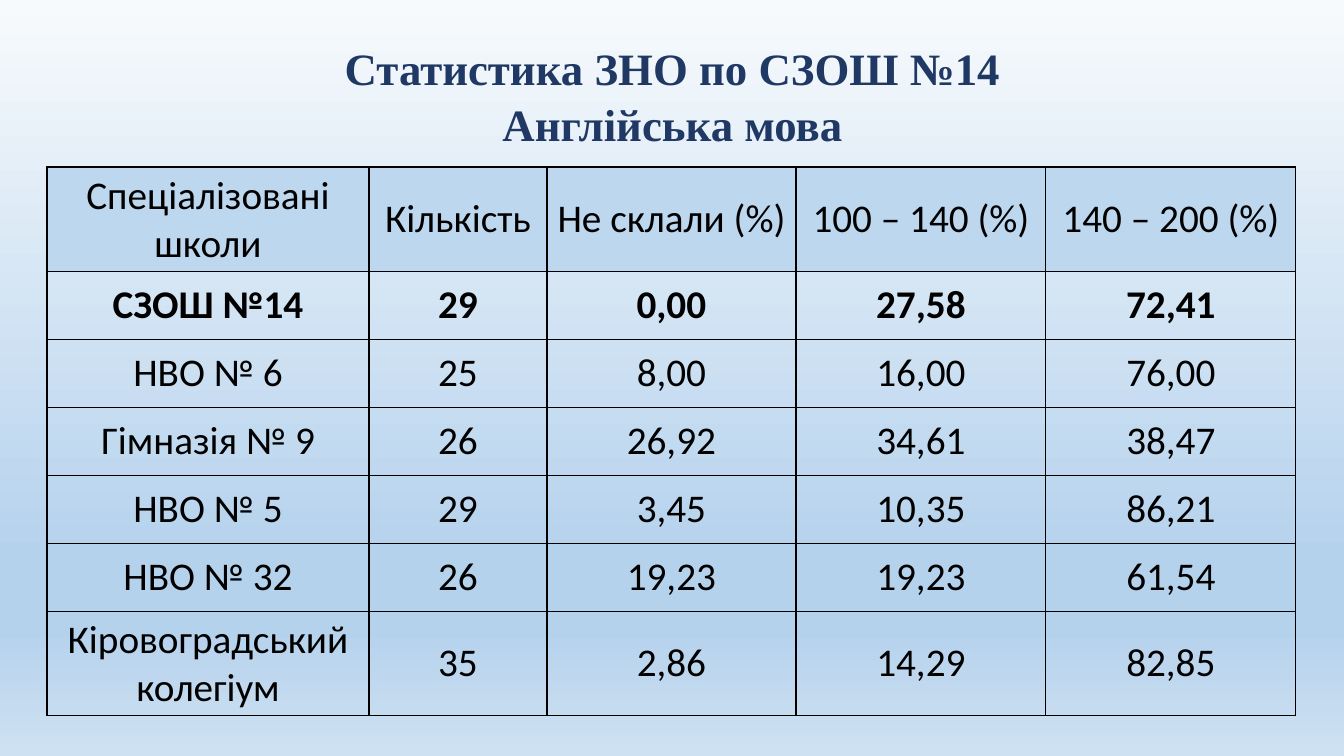
from lxml import etree
from pptx import Presentation
from pptx import util as u
from pptx.dml.color import RGBColor
from pptx.enum import text
from pptx.oxml.ns import qn

TITLE = "Статистика ЗНО по СЗОШ №14\vАнглійська мова"
HEADER = ["Спеціалізовані школи", "Кількість", "Не склали (%)", "100 – 140 (%)", "140 – 200 (%)"]
SCHOOLS = [
    ("СЗОШ №14", "29", "0,00", "27,58", "72,41"),
    ("НВО № 6", "25", "8,00", "16,00", "76,00"),
    ("Гімназія № 9", "26", "26,92", "34,61", "38,47"),
    ("НВО № 5", "29", "3,45", "10,35", "86,21"),
    ("НВО № 32", "26", "19,23", "19,23", "61,54"),
    ("Кіровоградський колегіум", "35", "2,86", "14,29", "82,85"),
]
HIGHLIGHTED = "СЗОШ №14"
BACKDROP = [(0, "F7FAFD"), (74, "B5D2EC"), (83, "B5D2EC"), (100, "CEE1F2")]
COLUMN_WIDTHS = [322, 178, 249, 250, 250]
ROW_HEIGHT = 68
HEADER_FILL, INK, TITLE_INK = "BDD7EE", "000000", "203864"


def px(n):
    return u.Emu(round(n * 914400 / 100.8))


def color(code):
    return RGBColor.from_string(code)


def write(frame, words, size, font="Calibri", ink=INK, bold=False, spacing=1.0):
    frame.word_wrap = True
    frame.vertical_anchor = text.MSO_ANCHOR.MIDDLE
    paragraph = frame.paragraphs[0]
    paragraph.text = words
    paragraph.alignment = text.PP_ALIGN.CENTER
    paragraph.line_spacing = spacing
    for run in paragraph.runs:
        run.font.size, run.font.name, run.font.bold = u.Pt(size), font, bold
        run.font.color.rgb = color(ink)


def add_solid(parent, code):
    solid = etree.SubElement(parent, qn("a:solidFill"))
    etree.SubElement(solid, qn("a:srgbClr"), val=code)


def paint_backdrop(slide):
    fill = slide.background.fill
    fill.gradient()
    fill.gradient_angle = 270
    stops = slide.element.find(".//" + qn("a:gsLst"))
    for stop in list(stops):
        stops.remove(stop)
    for percent, code in BACKDROP:
        stop = etree.SubElement(stops, qn("a:gs"), pos=str(percent * 1000))
        etree.SubElement(stop, qn("a:srgbClr"), val=code)


def outline(cell):
    properties = cell._tc.get_or_add_tcPr()
    for position, side in enumerate(("lnL", "lnR", "lnT", "lnB")):
        border = etree.Element(qn("a:" + side), w=str(u.Pt(1)))
        add_solid(border, INK)
        properties.insert(position, border)


def add_results(slide):
    rows = [HEADER, *SCHOOLS]
    results = slide.shapes.add_table(
        len(rows), len(HEADER), px(47), px(167),
        px(sum(COLUMN_WIDTHS)), px(ROW_HEIGHT * len(rows))).table
    results.first_row = results.horz_banding = False
    for column, width in zip(results.columns, COLUMN_WIDTHS):
        column.width = px(width)
    for r, values in enumerate(rows):
        results.rows[r].height = px(ROW_HEIGHT)
        for c, value in enumerate(values):
            cell = results.cell(r, c)
            cell.margin_left = cell.margin_right = px(7)
            write(cell.text_frame, value, 28, bold=values[0] == HIGHLIGHTED)
            cell.vertical_anchor = text.MSO_ANCHOR.MIDDLE
            if r == 0:
                cell.fill.solid()
                cell.fill.fore_color.rgb = color(HEADER_FILL)
            else:
                cell.fill.background()
            outline(cell)


def main():
    deck = Presentation()
    deck.slide_width, deck.slide_height = px(1344), px(756)
    slide = deck.slides.add_slide(deck.slide_layouts[6])
    paint_backdrop(slide)
    title = slide.shapes.add_textbox(px(93), px(21), px(1159), px(146))
    write(title.text_frame, TITLE, 32, font="Times New Roman", ink=TITLE_INK, bold=True, spacing=1.05)
    add_results(slide)
    deck.save("out.pptx")


if __name__ == "__main__":
    main()
